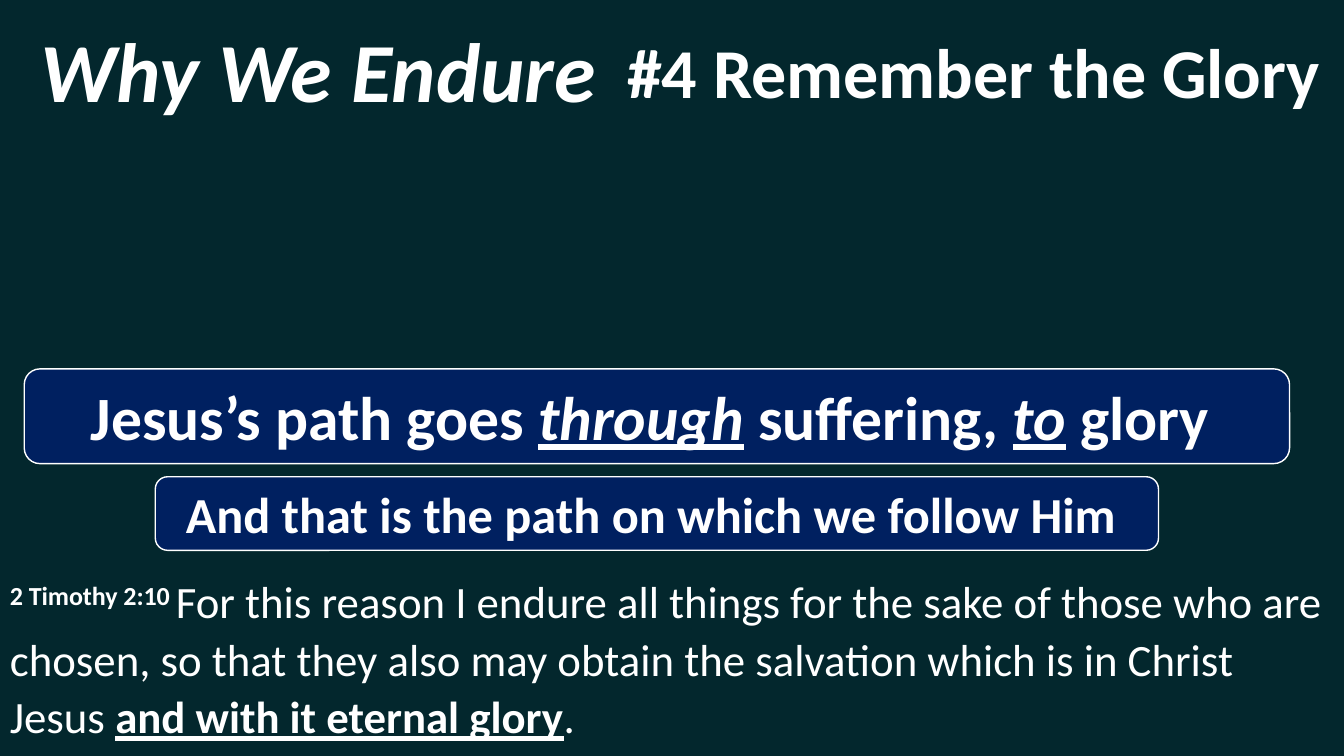
from dataclasses import dataclass, field

from pptx import Presentation
from pptx.dml.color import RGBColor
from pptx.enum.shapes import MSO_SHAPE as Preset
from pptx.enum.text import MSO_ANCHOR as Anchor, MSO_AUTO_SIZE as AutoSize, PP_ALIGN as Align
from pptx.slide import Slide
from pptx.text.text import TextFrame
from pptx.util import Inches, Pt


@dataclass(frozen=True)
class Theme:
    font: str = "Calibri"
    background: RGBColor = RGBColor(0x03, 0x27, 0x2D)
    banner: RGBColor = RGBColor(0x00, 0x20, 0x60)
    ink: RGBColor = RGBColor(0xFF, 0xFF, 0xFF)
    series_size: int = 60
    topic_size: int = 50
    claim_size: int = 44
    follow_size: int = 36
    verse_size: int = 32
    verse_spacing: float = 1.07
    outline: int = 1


THEME = Theme()
BOLD = {"bold": True}
BOLD_ITALIC = {"bold": True, "italic": True}
STRESSED = {"bold": True, "italic": True, "underline": True}
BOLD_UNDERLINED = {"bold": True, "underline": True}


@dataclass(frozen=True)
class Phrase:
    text: str
    format: dict = field(default_factory=dict)
    raised: bool = False


@dataclass(frozen=True)
class Block:
    box: tuple[float, float, float, float]
    size: int
    phrases: list[Phrase]


TITLES = [
    Block((0, 0.13, 6.31, 1.11), THEME.series_size, [Phrase("Why We Endure", BOLD_ITALIC)]),
    Block((5.95, 0.23, 7.42, 0.94), THEME.topic_size, [Phrase("#4 Remember the Glory", BOLD)]),
]
VERSE = Block((0, 5.53, 13.33, 1.97), THEME.verse_size, [
    Phrase("2 Timothy 2:10 ", BOLD, raised=True),
    Phrase("For this reason I endure all things for the sake of those who are chosen, "
           "so that they also may obtain the salvation which is in Christ Jesus "),
    Phrase("and with it eternal glory", BOLD_UNDERLINED),
    Phrase("."),
])
BANNERS = [
    Block((0.24, 3.66, 12.55, 0.94), THEME.claim_size, [
        Phrase("Jesus’s path goes ", BOLD),
        Phrase("through", STRESSED),
        Phrase(" suffering, ", BOLD),
        Phrase("to", STRESSED),
        Phrase(" glory ", BOLD),
    ]),
    Block((1.54, 4.73, 9.95, 0.73), THEME.follow_size,
          [Phrase("And that is the path on which we follow Him ", BOLD)]),
]


def write_phrases(frame: TextFrame, block: Block, align: Align, spacing: float = 1.0) -> None:
    frame.word_wrap = True
    paragraph = frame.paragraphs[0]
    paragraph.alignment = align
    paragraph.line_spacing = spacing
    for phrase in block.phrases:
        run = paragraph.add_run()
        run.text = phrase.text
        run.font.color.rgb = THEME.ink
        settings = {"name": THEME.font, "size": Pt(block.size), **phrase.format}
        for name, value in settings.items():
            setattr(run.font, name, value)
        if phrase.raised:
            run._r.get_or_add_rPr().set("baseline", "30000")


def add_title(slide: Slide, block: Block) -> None:
    title = slide.shapes.add_textbox(*map(Inches, block.box))
    write_phrases(title.text_frame, block, Align.CENTER)
    title.text_frame.auto_size = AutoSize.SHAPE_TO_FIT_TEXT


def add_panel(slide: Slide, block: Block, preset: Preset, fill: RGBColor, outlined: bool,
              align: Align, spacing: float = 1.0) -> None:
    panel = slide.shapes.add_shape(preset, *map(Inches, block.box))
    panel.shadow.inherit = False
    panel.fill.solid()
    panel.fill.fore_color.rgb = fill
    if outlined:
        panel.line.color.rgb = THEME.ink
        panel.line.width = Pt(THEME.outline)
    else:
        panel.line.fill.background()
    panel.text_frame.vertical_anchor = Anchor.MIDDLE
    write_phrases(panel.text_frame, block, align, spacing)


def main() -> None:
    deck = Presentation()
    deck.slide_width, deck.slide_height = Inches(13.33), Inches(7.5)
    slide = deck.slides.add_slide(deck.slide_layouts[6])
    slide.background.fill.solid()
    slide.background.fill.fore_color.rgb = THEME.background

    for title in TITLES:
        add_title(slide, title)
    add_panel(slide, VERSE, Preset.RECTANGLE, THEME.background, False,
              Align.LEFT, THEME.verse_spacing)
    for banner in BANNERS:
        add_panel(slide, banner, Preset.ROUNDED_RECTANGLE, THEME.banner, True, Align.CENTER)

    deck.save("out.pptx")


if __name__ == "__main__":
    main()
